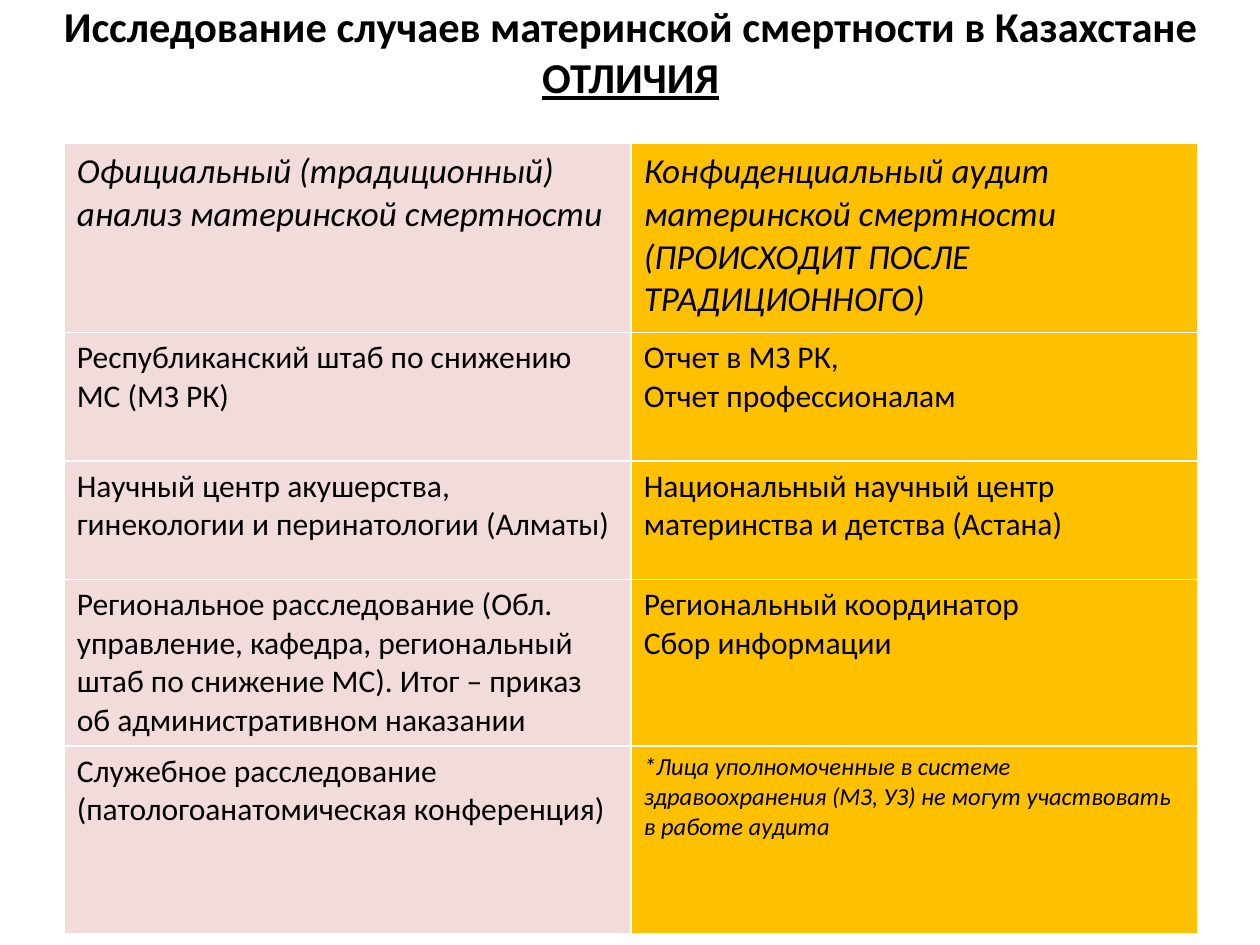
from dataclasses import dataclass
from pptx import Presentation
from pptx.dml.color import RGBColor as RGB
from pptx.enum.text import MSO_ANCHOR as Anchor, MSO_AUTO_SIZE as Fit, PP_ALIGN as Align
from pptx.util import Inches, Pt


@dataclass(frozen=True)
class Theme:
    face: str = "Calibri"
    ink: RGB = RGB(0, 0, 0)
    fills: tuple = (RGB(0xF2, 0xDC, 0xDB), RGB(0xFF, 0xC0, 0x00))
    title: float = 24.3
    head: float = 20
    body: float = 18
    note: float = 14


class Deck:
    def __init__(self, theme):
        self.theme = theme
        self.prs = Presentation()
        self.prs.slide_width, self.prs.slide_height = Inches(10), Inches(7.5)
        self.slide = self.prs.slides.add_slide(self.prs.slide_layouts[5])

    def style(self, font, size, bold=False, italic=False):
        font.name, font.size = self.theme.face, Pt(size)
        font.bold, font.italic = bold, italic
        font.color.rgb = self.theme.ink

    def title(self, top, under, box):
        shape = self.slide.shapes.title
        shape.left, shape.top, shape.width, shape.height = map(Inches, box)
        frame = shape.text_frame
        frame.auto_size, frame.word_wrap = Fit.NONE, True
        frame.vertical_anchor = Anchor.MIDDLE
        frame.margin_bottom = Inches(0.45)
        para = frame.paragraphs[0]
        para.alignment = Align.CENTER
        self.style(para.font, self.theme.title, bold=True)
        para.add_run().text = top
        para.add_line_break()
        run = para.add_run()
        run.text = under
        run.font.underline = True

    def table(self, rows, left, top, width, heights):
        count = len(rows[0])
        grid = self.slide.shapes.add_table(
            len(rows), count, Inches(left), Inches(top),
            Inches(width), Inches(sum(heights))).table
        for col in grid.columns:
            col.width = Inches(width / count)
        for row, high, texts in zip(grid.rows, heights, rows):
            row.height = Inches(high)
            for cell, text, fill in zip(row.cells, texts, self.theme.fills):
                self.cell(cell, text, fill, texts is rows[0])

    def cell(self, cell, text, fill, head):
        cell.fill.solid()
        cell.fill.fore_color.rgb = fill
        cell.text = text
        note = text.startswith("*")
        size = self.theme.head if head else self.theme.note if note else self.theme.body
        for para in cell.text_frame.paragraphs:
            self.style(para.font, size, italic=head or note)


ROWS = [
    ("Официальный (традиционный) анализ материнской смертности",
     "Конфиденциальный аудит материнской смертности (ПРОИСХОДИТ ПОСЛЕ ТРАДИЦИОННОГО)"),
    ("Республиканский штаб по снижению МС (МЗ РК)",
     "Отчет в МЗ РК,\nОтчет профессионалам"),
    ("Научный центр акушерства, гинекологии и перинатологии (Алматы)",
     "Национальный научный центр материнства и детства (Астана)"),
    ("Региональное расследование (Обл. управление, кафедра, региональный штаб по "
     "снижение МС). Итог – приказ об административном наказании",
     "Региональный координатор\nСбор информации"),
    ("Служебное расследование (патологоанатомическая конференция)",
     "*Лица уполномоченные в системе здравоохранения (МЗ, УЗ) не могут участвовать "
     "в работе аудита"),
]


def main():
    deck = Deck(Theme())
    deck.title("Исследование случаев материнской смертности в Казахстане",
               "ОТЛИЧИЯ", (0.2, 0.3, 9.61, 0.61))
    deck.table(ROWS, 0.51, 1.14, 9, (1.5, 1.02, 0.94, 1.32, 1.49))
    deck.prs.save("out.pptx")


if __name__ == "__main__":
    main()
